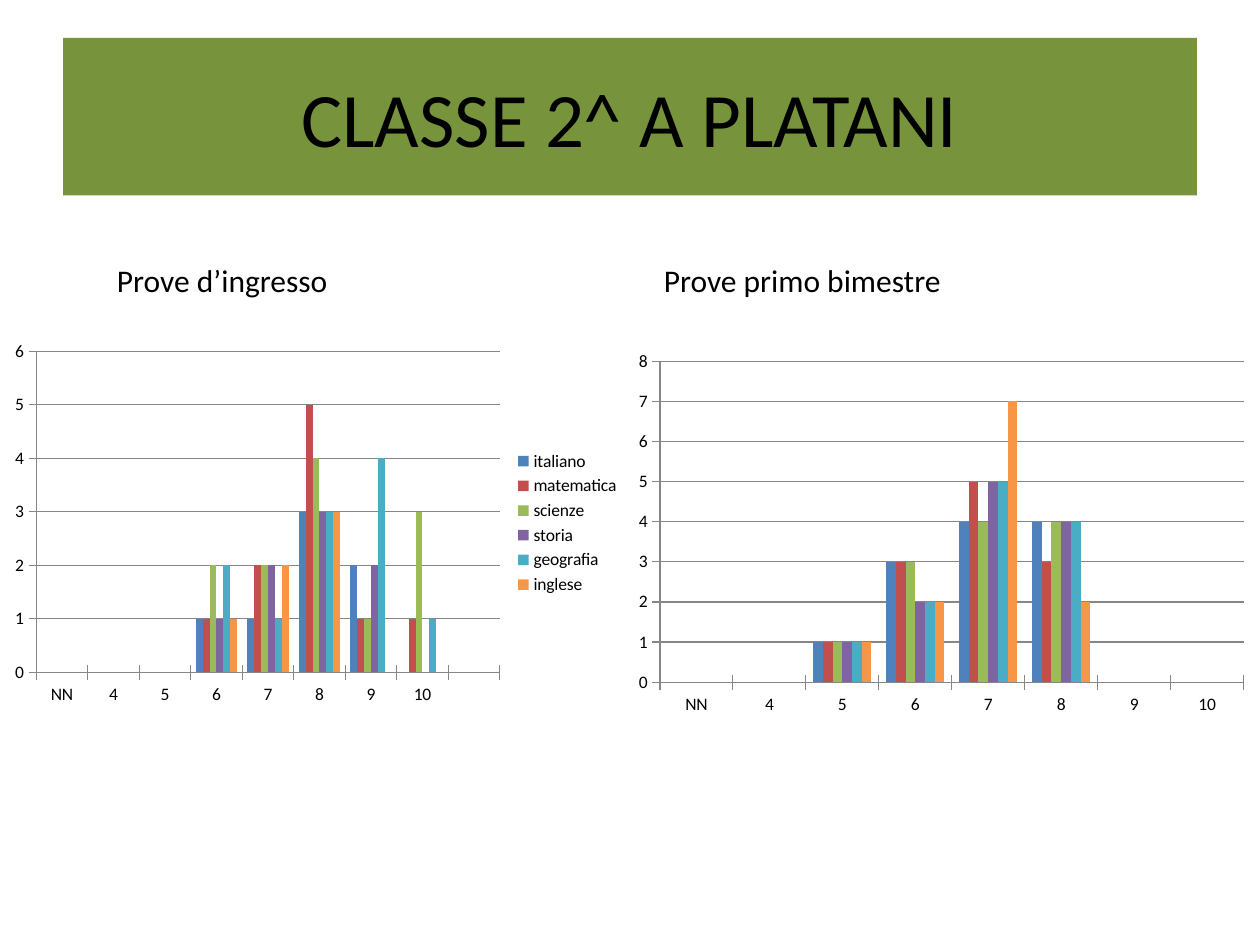
from pptx import Presentation
from pptx.chart.data import CategoryChartData
from pptx.dml.color import RGBColor
from pptx.enum.chart import XL_CHART_TYPE, XL_LEGEND_POSITION, XL_TICK_MARK
from pptx.enum.text import MSO_ANCHOR, MSO_AUTO_SIZE, PP_ALIGN
from pptx.util import Inches, Pt

CLUSTERED = XL_CHART_TYPE.COLUMN_CLUSTERED
LEGEND_RIGHT = XL_LEGEND_POSITION.RIGHT
TICK_CROSS = XL_TICK_MARK.CROSS
MIDDLE = MSO_ANCHOR.MIDDLE
CENTER = PP_ALIGN.CENTER
GROW = MSO_AUTO_SIZE.SHAPE_TO_FIT_TEXT
TITLE_ONLY = 5

FONT = "Calibri"
COLORS = {"text": "000000", "banner": "77933C", "axis": "868686"}
SERIES_COLORS = {
    "blue": "4F81BD",
    "red": "C0504D",
    "green": "9BBB59",
    "purple": "8064A2",
    "teal": "4BACC6",
    "orange": "F79646",
}

GRADES = ["NN", "4", "5", "6", "7", "8", "9", "10"]
ENTRY_TESTS = {
    "italiano": [None, None, None, 1, 1, 3, 2, None, None],
    "matematica": [None, None, None, 1, 2, 5, 1, 1, None],
    "scienze": [None, None, None, 2, 2, 4, 1, 3, None],
    "storia": [None, None, None, 1, 2, 3, 2, None, None],
    "geografia": [None, None, None, 2, 1, 3, 4, 1, None],
    "inglese ": [None, None, None, 1, 2, 3, None, None, None],
}
FIRST_TERM_TESTS = {
    "Series 1": [None, None, 1, 3, 4, 4, None, None],
    "Series 2": [None, None, 1, 3, 5, 3, None, None],
    "Series 3": [None, None, 1, 3, 4, 4, None, None],
    "Series 4": [None, None, 1, 2, 5, 4, None, None],
    "Series 5": [None, None, 1, 2, 5, 4, None, None],
    "Series 6": [None, None, 1, 2, 7, 2, None, None],
}


class SlideBuilder:
    def __init__(self, slide):
        self.slide = slide

    def style_font(self, font, size):
        font.name = FONT
        font.size = Pt(size)
        font.color.rgb = RGBColor.from_string(COLORS["text"])

    def style_line(self, line):
        line.color.rgb = RGBColor.from_string(COLORS["axis"])
        line.width = Pt(0.75)

    def add_run(self, paragraph, text, size):
        run = paragraph.add_run()
        run.text = text
        self.style_font(run.font, size)

    def title(self, text, left, top, width, height):
        shape = self.slide.shapes.title
        shape.left, shape.top = Inches(left), Inches(top)
        shape.width, shape.height = Inches(width), Inches(height)
        shape.fill.solid()
        shape.fill.fore_color.rgb = RGBColor.from_string(COLORS["banner"])
        shape.text_frame.vertical_anchor = MIDDLE
        paragraph = shape.text_frame.paragraphs[0]
        paragraph.alignment = CENTER
        self.add_run(paragraph, text, 44)

    def label(self, text, left, top, width, height):
        shape = self.slide.shapes.add_textbox(
            Inches(left), Inches(top), Inches(width), Inches(height))
        shape.text_frame.word_wrap = False
        shape.text_frame.auto_size = GROW
        self.add_run(shape.text_frame.paragraphs[0], text, 18)

    def column_chart(self, categories, results, left, top, width, height,
                     legend=False):
        data = CategoryChartData()
        data.categories = categories
        for name, values in results.items():
            data.add_series(name, values)
        chart = self.slide.shapes.add_chart(
            CLUSTERED, Inches(left), Inches(top), Inches(width),
            Inches(height), data).chart
        self.style_font(chart.font, 10)
        chart.has_title = False
        chart.has_legend = legend
        if legend:
            chart.legend.position = LEGEND_RIGHT
            chart.legend.include_in_layout = False

        plot = chart.plots[0]
        plot.vary_by_categories = False
        plot.gap_width = 150
        plot.overlap = 0
        for series, color in zip(plot.series, SERIES_COLORS.values()):
            series.format.fill.solid()
            series.format.fill.fore_color.rgb = RGBColor.from_string(color)

        for axis in (chart.category_axis, chart.value_axis):
            axis.major_tick_mark = TICK_CROSS
            self.style_line(axis.format.line)
        chart.value_axis.major_unit = 1
        chart.value_axis.has_major_gridlines = True
        self.style_line(chart.value_axis.major_gridlines.format.line)


def main():
    presentation = Presentation()
    presentation.slide_width = Inches(10)
    presentation.slide_height = Inches(7.5)
    layout = presentation.slide_layouts[TITLE_ONLY]
    builder = SlideBuilder(presentation.slides.add_slide(layout))

    builder.title("CLASSE 2^ A PLATANI", 0.5, 0.3, 9, 1.25)
    builder.column_chart(GRADES + [""], ENTRY_TESTS, 0.02, 2.65, 5, 3,
                         legend=True)
    builder.column_chart(GRADES, FIRST_TERM_TESTS, 4.97, 2.73, 5, 3)
    builder.label("Prove d’ingresso", 0.83, 2.02, 1.89, 0.4)
    builder.label("Prove primo bimestre", 5.17, 2.02, 2.42, 0.4)

    presentation.save("out.pptx")


if __name__ == "__main__":
    main()
